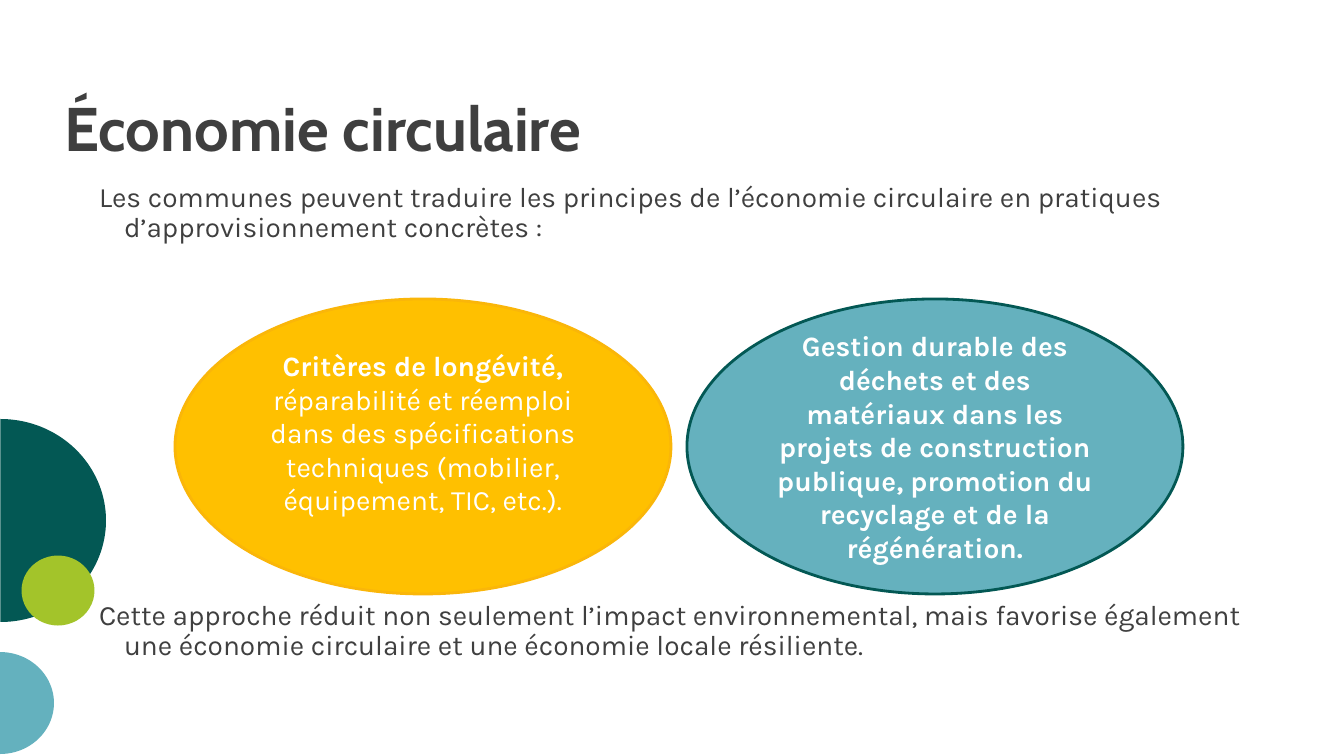
"""Build the slide on the circular economy in public procurement."""
from pptx import Presentation
from pptx.dml.color import RGBColor
from pptx.enum.shapes import MSO_SHAPE
from pptx.enum.text import MSO_ANCHOR, MSO_AUTO_SIZE, PP_ALIGN
from pptx.oxml.xmlchemy import OxmlElement
from pptx.util import Pt

EMU_PER_PX = 914400 / 100.8
SLIDE_SIZE = (1344, 756)
INK, WHITE = "3F3F3F", "FFFFFF"

TITLE = "Économie circulaire"
TITLE_BOX = (64, 28, 1248, 135)
STATEMENTS = [
    "Les communes peuvent traduire les principes de l’économie circulaire "
    "en pratiques d’approvisionnement concrètes\u00a0:",
    "Cette approche réduit non seulement l’impact environnemental, mais favorise "
    "également une économie circulaire et une économie locale résiliente.",
]
STATEMENTS_BOX = (74, 158, 1190, 523)
STATEMENT_GAP = 358

DECORATIONS = [
    (MSO_SHAPE.PIE, (-101, 415, 203, 211), "035854"),
    (MSO_SHAPE.PIE, (-51, 649, 102, 108), "64B1BE"),
    (MSO_SHAPE.OVAL, (23, 554, 70, 73), "A3C42A"),
]
PRACTICES = [
    {"fill": "FFC000", "line": "FAB609", "bottom": 33,
     "runs": [("Critères de longévité, ", True),
              ("réparabilité et réemploi dans des spécifications techniques "
               "(mobilier, équipement, TIC, etc.).", False)]},
    {"fill": "65B1BE", "line": "035854", "bottom": 5,
     "runs": [("Gestion durable des déchets et des matériaux dans les projets de "
               "construction publique, promotion du recyclage et de la régénération.", True)]},
]
PRACTICE_LEFT, PRACTICE_TOP, PRACTICE_GAP = 175, 299, 16
PRACTICE_WIDTH, PRACTICE_HEIGHT = 496, 295


def px(length):
    return round(length * EMU_PER_PX)


def color(value):
    return RGBColor.from_string(value)


def style(font, name, size, ink, bold=False):
    font.name, font.size, font.bold = name, Pt(size), bold
    font.color.rgb = color(ink)


def set_frame(frame, anchor, left, top, right, bottom):
    frame.word_wrap, frame.auto_size = True, MSO_AUTO_SIZE.NONE
    frame.vertical_anchor = anchor
    frame.margin_left, frame.margin_top = px(left), px(top)
    frame.margin_right, frame.margin_bottom = px(right), px(bottom)


def place(holder, box):
    holder.left, holder.top, holder.width, holder.height = map(px, box)


def add_filled(slide, kind, box, fill):
    shape = slide.shapes.add_shape(kind, *map(px, box))
    shape.shadow.inherit = False
    shape.fill.solid()
    shape.fill.fore_color.rgb = color(fill)
    shape.line.fill.background()
    return shape


def add_decorations(slide):
    for kind, box, fill in DECORATIONS:
        decoration = add_filled(slide, kind, box, fill)
        decoration.rotation = 270
        if kind == MSO_SHAPE.PIE:
            decoration.adjustments[0] = 0
            decoration.adjustments[1] = 108


def fill_title(title):
    place(title, TITLE_BOX)
    set_frame(title.text_frame, MSO_ANCHOR.BOTTOM, 0, 0, 0, 0)
    title.text_frame.text = TITLE
    heading = title.text_frame.paragraphs[0]
    heading.alignment, heading.line_spacing = PP_ALIGN.LEFT, 0.8
    style(heading.runs[0].font, "Cabin", 44, INK, True)


def fill_statements(body):
    place(body, STATEMENTS_BOX)
    set_frame(body.text_frame, MSO_ANCHOR.TOP, 0, 25, 0, 0)
    body.text_frame.text = "\n".join(STATEMENTS)
    for index, statement in enumerate(body.text_frame.paragraphs):
        properties = statement._p.get_or_add_pPr()
        properties.set("marL", str(px(50)))
        properties.set("indent", str(px(-25)))
        properties.append(OxmlElement("a:buNone"))
        statement.line_spacing = 0.9
        statement.space_before = px(STATEMENT_GAP * index)
        style(statement.runs[0].font, "Karla", 20, INK)


def add_practices(slide):
    for index, practice in enumerate(PRACTICES):
        left = PRACTICE_LEFT + index * (PRACTICE_WIDTH + PRACTICE_GAP)
        box = (left, PRACTICE_TOP, PRACTICE_WIDTH, PRACTICE_HEIGHT)
        oval = add_filled(slide, MSO_SHAPE.OVAL, box, practice["fill"])
        oval.line.color.rgb = color(practice["line"])
        oval.line.width = Pt(2)
        set_frame(oval.text_frame, MSO_ANCHOR.MIDDLE, 10, 5, 10, practice["bottom"])
        wording = oval.text_frame.paragraphs[0]
        wording.alignment = PP_ALIGN.CENTER
        for text, bold in practice["runs"]:
            run = wording.add_run()
            run.text = text
            style(run.font, "Karla", 20, WHITE, bold)


def main():
    deck = Presentation()
    deck.slide_width, deck.slide_height = map(px, SLIDE_SIZE)
    slide = deck.slides.add_slide(deck.slide_layouts[1])
    add_decorations(slide)
    fill_title(slide.shapes.title)
    fill_statements(slide.placeholders[1])
    add_practices(slide)
    deck.save("out.pptx")


if __name__ == "__main__":
    main()
